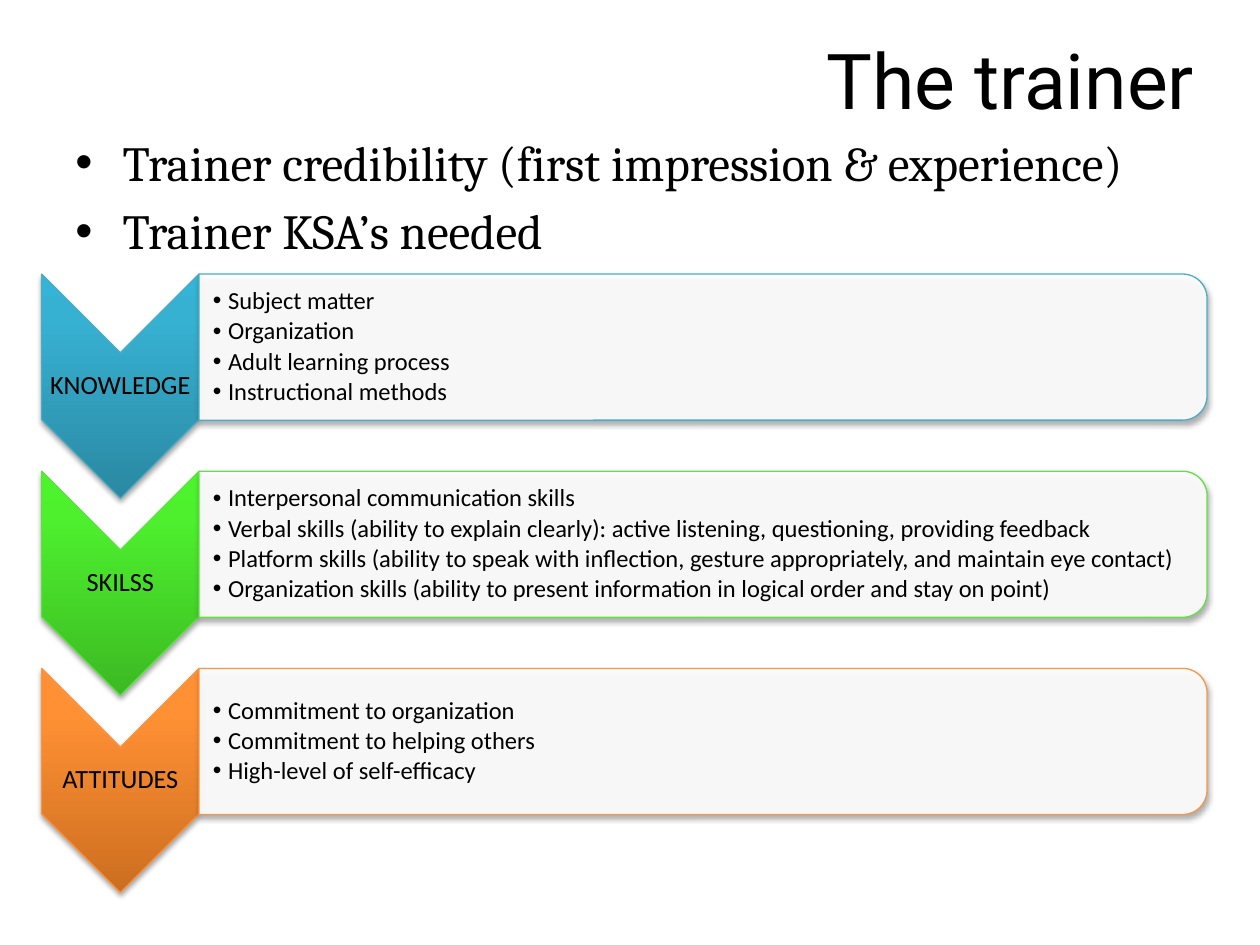
from lxml import etree
from pptx import Presentation
from pptx.dml.color import RGBColor
from pptx.enum.shapes import MSO_SHAPE
from pptx.enum.text import MSO_ANCHOR, PP_ALIGN
from pptx.oxml import parse_xml
from pptx.oxml.ns import qn
from pptx.util import Inches, Pt

CHEVRON = MSO_SHAPE.CHEVRON
PANEL = MSO_SHAPE.ROUND_2_SAME_RECTANGLE
TOP, MIDDLE = MSO_ANCHOR.TOP, MSO_ANCHOR.MIDDLE
LEFT, CENTER, RIGHT = PP_ALIGN.LEFT, PP_ALIGN.CENTER, PP_ALIGN.RIGHT

BLACK = RGBColor(0, 0, 0)
WHITE = RGBColor(255, 255, 255)
BLUE = RGBColor(0x4B, 0xAC, 0xC6)
GREEN = RGBColor(0x60, 0xE1, 0x46)
ORANGE = RGBColor(0xF7, 0x96, 0x46)
BLUES = [RGBColor(0x2A, 0x88, 0xA2), RGBColor(0x37, 0xB1, 0xD2), RGBColor(0x34, 0xB4, 0xD6)]
GREENS = [RGBColor(0x3C, 0xB9, 0x23), RGBColor(0x4E, 0xF0, 0x2E), RGBColor(0x4C, 0xF5, 0x2A)]
ORANGES = [RGBColor(0xCC, 0x6E, 0x20), RGBColor(0xFF, 0x90, 0x34), RGBColor(0xFF, 0x91, 0x36)]

NS = 'xmlns:a="http://schemas.openxmlformats.org/drawingml/2006/main"'
COLS = 100
WIDE, HIGH = Inches(10), Inches(7.5)
CELL = WIDE / COLS
FIRST, PITCH = 21.75, 15.65
EDGE, SPLIT, END = 3.3, 15.8, 95.8
TALL, TIP = 11.6, 17.8

TITLE = "The trainer"
POINTS = ["Trainer credibility (first impression & experience)", "Trainer KSA’s needed"]
ROWS = [
    ("KNOWLEDGE", BLUE, BLUES, [
        "Subject matter",
        "Organization",
        "Adult learning process",
        "Instructional methods",
    ]),
    ("SKILSS", GREEN, GREENS, [
        "Interpersonal communication skills",
        "Verbal skills (ability to explain clearly): active listening, questioning, providing feedback",
        "Platform skills (ability to speak with inflection, gesture appropriately, and maintain eye contact)",
        "Organization skills (ability to present information in logical order and stay on point)",
    ]),
    ("ATTITUDES", ORANGE, ORANGES, [
        "Commitment to organization",
        "Commitment to helping others",
        "High-level of self-efficacy",
    ]),
]


def cells(*nums):
    return [round(num * CELL) for num in nums]


def add_text(slide, box, lines, font, size, align=LEFT, anchor=TOP, pads=None,
             indent=0, before=0, after=0, gap=1.0):
    frame = slide.shapes.add_textbox(*cells(*box)).text_frame
    frame.word_wrap = True
    frame.vertical_anchor = anchor
    if pads:
        (frame.margin_left, frame.margin_top,
         frame.margin_right, frame.margin_bottom) = cells(*pads)
    for num, line in enumerate(lines):
        para = frame.paragraphs[0] if num == 0 else frame.add_paragraph()
        para.alignment = align
        para.line_spacing = gap
        para.space_before, para.space_after = Pt(before), Pt(after)
        if indent:
            add_bullet(para, indent)
        run = para.add_run()
        run.text = line
        run.font.name, run.font.size = font, Pt(size)
        run.font.color.rgb = BLACK


def add_bullet(para, indent):
    props = para._p.get_or_add_pPr()
    step = cells(indent)[0]
    props.set("marL", str(step))
    props.set("indent", str(-step))
    etree.SubElement(props, qn("a:buFont")).set("typeface", "Arial")
    etree.SubElement(props, qn("a:buChar")).set("char", "•")


def add_turned(slide, kind, left, top, width, height, line):
    mid, half = left + width / 2, top + height / 2
    box = cells(mid - height / 2, half - width / 2, height, width)
    shape = slide.shapes.add_shape(kind, *box)
    shape.rotation = 90
    shape.line.color.rgb = line
    shape.line.width = Pt(0.75)
    shape.shadow.inherit = False
    shape._element.spPr.find(qn("a:effectLst")).append(parse_xml(
        f'<a:outerShdw {NS} blurRad="{Pt(3.1)}" dist="{Pt(1.8)}" dir="5400000" '
        'rotWithShape="0"><a:srgbClr val="000000"><a:alpha val="35000"/>'
        '</a:srgbClr></a:outerShdw>'))
    return shape


def fill_fade(shape, tones):
    stops = "".join(
        f'<a:gs pos="{spot}"><a:srgbClr val="{tone}"/></a:gs>'
        for spot, tone in zip((0, 80000, 100000), tones))
    fade = parse_xml(
        f'<a:gradFill {NS} rotWithShape="0"><a:gsLst>{stops}</a:gsLst>'
        '<a:lin ang="16200000" scaled="0"/></a:gradFill>')
    shape._element.spPr.find(qn("a:prstGeom")).addnext(fade)


def fill_clear(shape):
    shape.fill.solid()
    shape.fill.fore_color.rgb = WHITE
    tone = shape._element.spPr.find(qn("a:solidFill"))[0]
    etree.SubElement(tone, qn("a:alpha")).set("val", "90000")


def add_row(slide, top, label, line, tones, items):
    wide = SPLIT - EDGE
    fill_fade(add_turned(slide, CHEVRON, EDGE, top, wide, TIP, line), tones)
    add_text(slide, (EDGE, top + wide / 2, wide, TIP - wide), [label], "Calibri", 15,
             CENTER, MIDDLE, pads=(0.1,) * 4, gap=0.9)
    fill_clear(add_turned(slide, PANEL, SPLIT, top, END - SPLIT, TALL, line))
    add_text(slide, (SPLIT, top + 0.6, 79.5, TALL - 1.2), items, "Calibri", 14,
             anchor=MIDDLE, pads=(1.1, 0.1, 0.1, 0.1), indent=1.2, after=2.1, gap=0.9)


def main():
    deck = Presentation()
    deck.slide_width, deck.slide_height = WIDE, HIGH
    slide = deck.slides.add_slide(deck.slide_layouts[6])
    add_text(slide, (5.8, 0, 90, 12.5), [TITLE], "Roboto", 44, RIGHT, MIDDLE)
    add_text(slide, (5, 10, 90, 57), POINTS, "Cambria", 28, indent=3.75, before=5.6)
    for num, row in enumerate(ROWS):
        add_row(slide, FIRST + num * PITCH, *row)
    deck.save("out.pptx")


if __name__ == "__main__":
    main()
